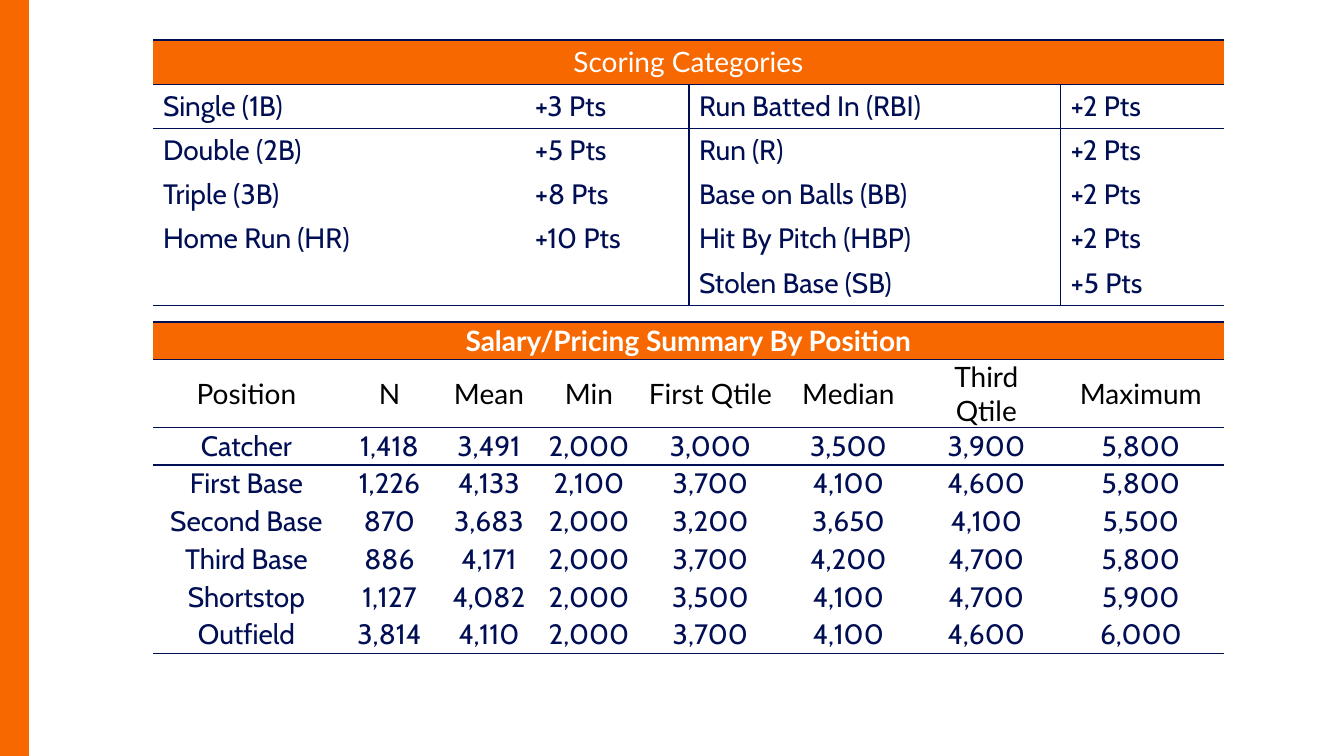
from lxml import etree
from pptx import Presentation
from pptx import util as u
from pptx.dml.color import RGBColor
from pptx.enum import shapes, text
from pptx.oxml import ns

ORANGE = RGBColor(0xF7, 0x69, 0x00)
NAVY = RGBColor(0x00, 0x0E, 0x54)
BLACK = RGBColor(0, 0, 0)
WHITE = RGBColor(0xFF, 0xFF, 0xFF)
PLAIN = "{2D5ABB26-0587-4C30-8999-92F81FD0307C}"
HEAD, BODY = "Lato", "Cabin"
LEFT, MID = text.PP_ALIGN.LEFT, text.PP_ALIGN.CENTER

SCORES = [
    ("Single (1B)", "+3 Pts", "Run Batted In (RBI)", "+2 Pts"),
    ("Double (2B)", "+5 Pts", "Run (R)", "+2 Pts"),
    ("Triple (3B)", "+8 Pts", "Base on Balls (BB)", "+2 Pts"),
    ("Home Run (HR)", "+10 Pts", "Hit By Pitch (HBP)", "+2 Pts"),
    ("", "", "Stolen Base (SB)", "+5 Pts"),
]
LABELS = ("Position", "N", "Mean", "Min", "First Qtile", "Median",
          "Third Qtile", "Maximum")
PRICES = [
    ("Catcher", 1418, 3491, 2000, 3000, 3500, 3900, 5800),
    ("First Base", 1226, 4133, 2100, 3700, 4100, 4600, 5800),
    ("Second Base", 870, 3683, 2000, 3200, 3650, 4100, 5500),
    ("Third Base", 886, 4171, 2000, 3700, 4200, 4700, 5800),
    ("Shortstop", 1127, 4082, 2000, 3500, 4100, 4700, 5900),
    ("Outfield", 3814, 4110, 2000, 3700, 4100, 4600, 6000),
]


def px(n):
    return u.Emu(round(n * 914400 / 100.8))


class Deck:
    def __init__(self):
        self.prs = Presentation()
        self.prs.slide_width, self.prs.slide_height = px(1344), px(756)
        self.slide = self.prs.slides.add_slide(self.prs.slide_layouts[6])

    def bar(self, x, y, w, h, color):
        shape = self.slide.shapes.add_shape(
            shapes.MSO_SHAPE.RECTANGLE, px(x), px(y), px(w), px(h))
        shape.shadow.inherit = False
        shape.fill.solid()
        shape.fill.fore_color.rgb = color
        shape.line.fill.background()

    def grid(self, x, y, h, cols, rows):
        """Add a plain table with a title row merged across all columns."""
        frame = self.slide.shapes.add_table(
            rows, len(cols), px(x), px(y), px(sum(cols)), px(h))
        table = frame.table
        table.first_row = table.horz_banding = False
        table._tbl.tblPr.find(ns.qn("a:tableStyleId")).text = PLAIN
        for col, w in zip(table.columns, cols):
            col.width = px(w)
        table.cell(0, 0).merge(table.cell(0, len(cols) - 1))
        for cell in table.iter_cells():
            cell.fill.background()
        return table

    def label(self, cell, words, font, color, align, bold=False):
        cell.text_frame.text = words
        para = cell.text_frame.paragraphs[0]
        para.alignment = align
        for run in para.runs:
            run.font.name, run.font.size = font, u.Pt(20)
            run.font.bold, run.font.color.rgb = bold, color

    def title(self, table, words, bold):
        cell = table.cell(0, 0)
        cell.fill.solid()
        cell.fill.fore_color.rgb = ORANGE
        self.label(cell, words, HEAD, WHITE, MID, bold)

    def pad(self, table, side):
        """Centre the cells upright, with side insets only."""
        for cell in table.iter_cells():
            cell.vertical_anchor = text.MSO_ANCHOR.MIDDLE
            cell.margin_left = cell.margin_right = px(side)
            cell.margin_top = cell.margin_bottom = 0

    def rule(self, table, across, down=()):
        """Draw lines at row edges across and, below the title, column edges down."""
        for r in range(len(table.rows)):
            for c in range(len(table.columns)):
                edges = (("lnL", r and c in down), ("lnR", r and c + 1 in down),
                         ("lnT", r in across), ("lnB", r + 1 in across))
                tags = [tag for tag, on in edges if on]
                props = table.cell(r, c)._tc.get_or_add_tcPr()
                for i, tag in enumerate(tags):
                    line = etree.Element(ns.qn("a:" + tag), w=str(u.Pt(1)))
                    fill = etree.SubElement(line, ns.qn("a:solidFill"))
                    etree.SubElement(fill, ns.qn("a:srgbClr"), val=str(NAVY))
                    props.insert(i, line)


def main():
    deck = Deck()
    deck.bar(0, 0, 29, 756, ORANGE)

    score = deck.grid(153, 40, 265, (372, 164, 372, 163), len(SCORES) + 1)
    deck.title(score, "Scoring Categories", False)
    for r, row in enumerate(SCORES, 1):
        for c, words in enumerate(row):
            deck.label(score.cell(r, c), words, BODY, NAVY, LEFT)
    deck.rule(score, (0, 1, len(SCORES) + 1), (2, 3))

    widths = (187, 99, 100, 100, 143, 133, 143, 166)
    price = deck.grid(153, 322, 302, widths, len(PRICES) + 2)
    deck.pad(price, 8)
    deck.title(price, "Salary/Pricing Summary By Position", True)
    for c, words in enumerate(LABELS):
        deck.label(price.cell(1, c), words, HEAD, BLACK, MID)
    for r, (name, *nums) in enumerate(PRICES, 2):
        for c, words in enumerate([name] + [f"{n:,}" for n in nums]):
            deck.label(price.cell(r, c), words, BODY, NAVY, MID)
    deck.rule(price, (0, 1, 2, len(PRICES) + 2))

    deck.prs.save("out.pptx")


if __name__ == "__main__":
    main()
